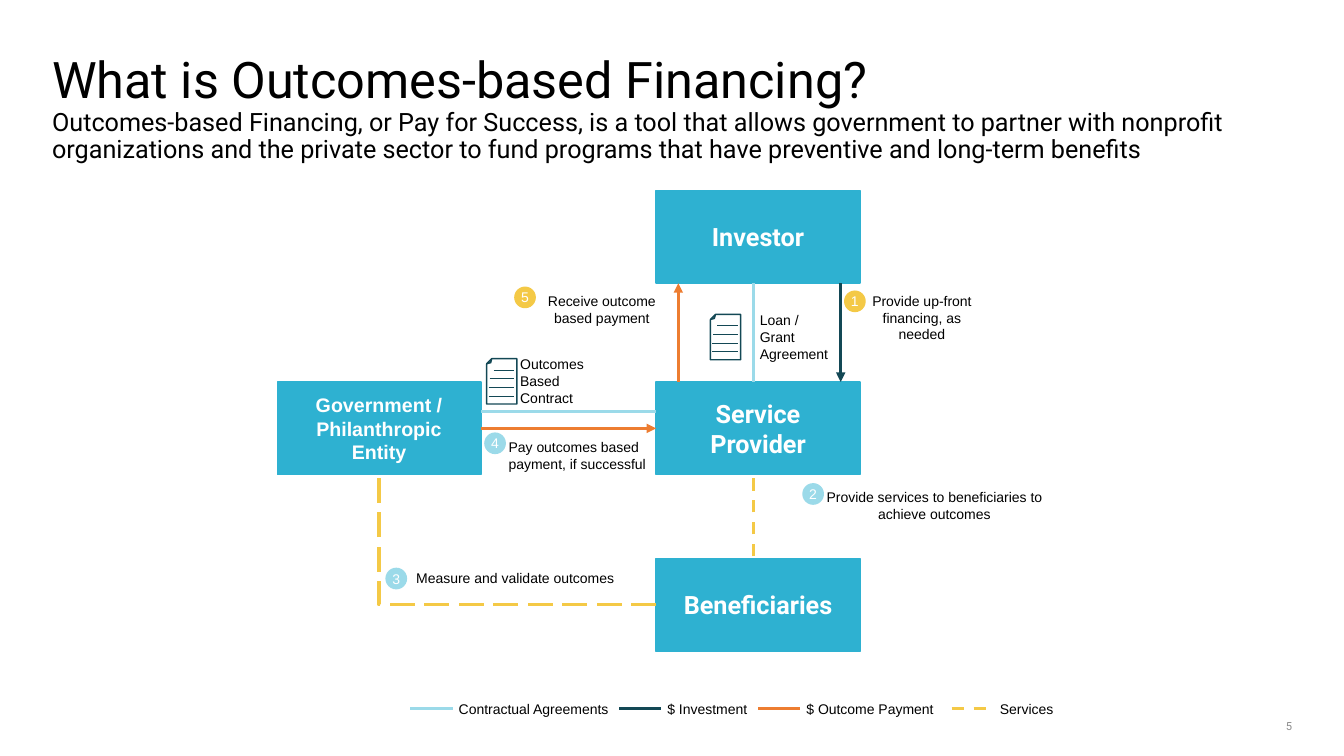
from dataclasses import dataclass

from lxml.etree import SubElement
from pptx import Presentation
from pptx.dml.color import RGBColor
from pptx.enum.dml import MSO_LINE
from pptx.enum.shapes import MSO_CONNECTOR, MSO_SHAPE
from pptx.enum.text import MSO_ANCHOR, MSO_AUTO_SIZE, PP_ALIGN
from pptx.oxml.ns import qn
from pptx.slide import Slide
from pptx.util import Pt


@dataclass(frozen=True)
class Theme:
    box: str = "2EB1D1"
    contract: str = "9BDAE9"
    investment: str = "134855"
    payment: str = "ED7D31"
    service: str = "F4C946"
    black: str = "000000"
    white: str = "FFFFFF"
    grey: str = "8C8C8C"
    heading: str = "Roboto"
    body: str = "Arial"
    title_size: float = 36
    lead_size: float = 18
    box_size: float = 18
    long_box_size: float = 14
    label_size: float = 10
    number_size: float = 8
    flow_width: float = 2.25
    outline_width: float = 1
    ruling_width: float = 0.5


@dataclass
class Diagram:
    slide: Slide
    theme: Theme

    def fill_text(self, frame, lines, sizes, font, color, align, paragraph_format=None, **run_format):
        frame.word_wrap = True
        for index, text in enumerate(lines):
            paragraph = frame.paragraphs[0] if index == 0 else frame.add_paragraph()
            formats = {"alignment": align, **(paragraph_format or {})}
            for name, value in formats.items():
                setattr(paragraph, name, value)
            run = paragraph.add_run()
            run.text = text
            size = sizes[index] if isinstance(sizes, tuple) else sizes
            for name, value in {"name": font, "size": Pt(size), **run_format}.items():
                setattr(run.font, name, value)
            run.font.color.rgb = RGBColor.from_string(color)

    def title(self, left, top, width, height, lines):
        shape = self.slide.shapes.title
        place = {"left": left, "top": top, "width": width, "height": height}
        for name, value in place.items():
            setattr(shape, name, Pt(value))
        frame = shape.text_frame
        frame.auto_size = MSO_AUTO_SIZE.NONE
        frame.vertical_anchor = MSO_ANCHOR.TOP
        self.fill_text(frame, lines, (self.theme.title_size, self.theme.lead_size),
                       self.theme.heading, self.theme.black, PP_ALIGN.LEFT,
                       {"line_spacing": 0.9, "space_before": Pt(0)})

    def slide_number(self, left, top, width, height, text):
        shape = self.slide.shapes.add_textbox(Pt(left), Pt(top), Pt(width), Pt(height))
        shape.text_frame.vertical_anchor = MSO_ANCHOR.MIDDLE
        self.fill_text(shape.text_frame, [text], self.theme.number_size, self.theme.heading,
                       self.theme.grey, PP_ALIGN.RIGHT)

    def label(self, left, top, width, *lines, align=PP_ALIGN.LEFT):
        height = 7.2 + 12 * len(lines)
        shape = self.slide.shapes.add_textbox(Pt(left), Pt(top), Pt(width), Pt(height))
        shape.text_frame.auto_size = MSO_AUTO_SIZE.SHAPE_TO_FIT_TEXT
        self.fill_text(shape.text_frame, lines, self.theme.label_size, self.theme.body,
                       self.theme.black, align)

    def outline(self, kind, left, top, width, height, color, filled=True):
        shape = self.slide.shapes.add_shape(kind, Pt(left), Pt(top), Pt(width), Pt(height))
        shape.shadow.inherit = False
        if filled:
            shape.fill.solid()
            shape.fill.fore_color.rgb = RGBColor.from_string(color)
        else:
            shape.fill.background()
        shape.line.color.rgb = RGBColor.from_string(color)
        shape.line.width = Pt(self.theme.outline_width)
        return shape

    def box(self, left, top, text, size, font):
        shape = self.outline(MSO_SHAPE.RECTANGLE, left, top, BOX_WIDTH, BOX_HEIGHT, self.theme.box)
        shape.text_frame.vertical_anchor = MSO_ANCHOR.MIDDLE
        self.fill_text(shape.text_frame, [text], size, font, self.theme.white,
                       PP_ALIGN.CENTER, bold=True)
        return shape

    def badge(self, left, top, text, color):
        shape = self.outline(MSO_SHAPE.OVAL, left, top, 14.5, 14.5, color)
        frame = shape.text_frame
        frame.vertical_anchor = MSO_ANCHOR.MIDDLE
        for side in ("left", "top", "right", "bottom"):
            setattr(frame, f"margin_{side}", 0)
        self.fill_text(frame, [text], self.theme.label_size, self.theme.body,
                       self.theme.white, PP_ALIGN.CENTER)

    def line(self, start, end, color, width, dash=None, arrow=False, kind=MSO_CONNECTOR.STRAIGHT):
        connector = self.slide.shapes.add_connector(kind, *map(Pt, (*start, *end)))
        connector.line.color.rgb = RGBColor.from_string(color)
        connector.line.width = Pt(width)
        if dash:
            connector.line.dash_style = dash
        properties = connector._element.spPr
        if arrow:
            SubElement(properties.find(qn("a:ln")), qn("a:tailEnd"), type="triangle")
        SubElement(properties, qn("a:effectLst"))
        return connector

    def flow(self, start, end, color, **options):
        return self.line(start, end, color, self.theme.flow_width, **options)

    def bent_flow(self, start, end, color, dash):
        connector = self.flow(start, end, color, dash=dash, kind=MSO_CONNECTOR.ELBOW)
        connector._element.spPr.find(qn("a:prstGeom")).set("prst", "bentConnector2")
        return connector

    def contract_icon(self, left, top):
        page = self.outline(MSO_SHAPE.FOLDED_CORNER, left, top, 21.6, 32.4,
                            self.theme.investment, filled=False)
        page.rotation = 180
        for row, indent in enumerate((5, 2.2, 1.5, 1.5)):
            height = top + 8 + 6.2 * row
            self.line((left + indent, height), (left + 19.5, height),
                      self.theme.investment, self.theme.ruling_width)


BOX_WIDTH, BOX_HEIGHT = 145.5, 66.3
ENTITY_LEFT, PROVIDER_LEFT = 198, 468.7
INVESTOR_TOP, PROVIDER_TOP, BENEFICIARIES_TOP = 136, 272.8, 398.9
INVESTOR_BOTTOM = INVESTOR_TOP + BOX_HEIGHT
PROVIDER_BOTTOM = PROVIDER_TOP + BOX_HEIGHT
ENTITY_RIGHT = ENTITY_LEFT + BOX_WIDTH
PROVIDER_MIDDLE = PROVIDER_TOP + BOX_HEIGHT / 2
BENEFICIARIES_MIDDLE = BENEFICIARIES_TOP + BOX_HEIGHT / 2
AXIS = 538.4
LEGEND_MIDDLE = 506.2

presentation = Presentation()
presentation.slide_width, presentation.slide_height = Pt(960), Pt(540)
slide = presentation.slides.add_slide(presentation.slide_layouts[5])
theme = Theme()
diagram = Diagram(slide, theme)

diagram.title(30, 36, 900, 72, [
    "What is Outcomes-based Financing?",
    "Outcomes-based Financing, or Pay for Success, is a tool that allows government to partner "
    "with nonprofit organizations and the private sector to fund programs that have preventive "
    "and long-term benefits",
])
diagram.slide_number(732, 504, 198, 28.8, "5")

provider = diagram.box(PROVIDER_LEFT, PROVIDER_TOP, "Service Provider", theme.box_size, theme.heading)
beneficiaries = diagram.box(PROVIDER_LEFT, BENEFICIARIES_TOP, "Beneficiaries",
                            theme.box_size, theme.heading)
entity = diagram.box(ENTITY_LEFT, PROVIDER_TOP, "Government / Philanthropic Entity",
                     theme.long_box_size, theme.body)
diagram.box(PROVIDER_LEFT, INVESTOR_TOP, "Investor", theme.box_size, theme.heading)

diagram.flow((484.5, PROVIDER_TOP), (484.5, INVESTOR_BOTTOM), theme.payment, arrow=True)
diagram.flow((600.5, INVESTOR_BOTTOM), (600.5, PROVIDER_TOP), theme.investment, arrow=True)
diagram.flow((AXIS, INVESTOR_BOTTOM), (AXIS, PROVIDER_TOP), theme.contract)
diagram.flow((AXIS, 397.4), (AXIS, 336.2), theme.service, dash=MSO_LINE.DASH)
diagram.flow((ENTITY_RIGHT, 293.8), (PROVIDER_LEFT, 293.8), theme.contract)
payment = diagram.flow((ENTITY_RIGHT, PROVIDER_MIDDLE), (PROVIDER_LEFT, PROVIDER_MIDDLE),
                       theme.payment, arrow=True)
payment.begin_connect(entity, 3)
payment.end_connect(provider, 1)
validation = diagram.bent_flow((PROVIDER_LEFT, BENEFICIARIES_MIDDLE),
                               (ENTITY_LEFT + BOX_WIDTH / 2, PROVIDER_BOTTOM),
                               theme.service, MSO_LINE.LONG_DASH)
validation.begin_connect(beneficiaries, 1)
validation.end_connect(entity, 2)

for left, top, width, text, align in (
    (614.2, 205.2, 88.6, "Provide up-front financing, as needed", PP_ALIGN.CENTER),
    (581, 345.6, 172.8, "Provide services to beneficiaries to achieve outcomes", PP_ALIGN.CENTER),
    (281.5, 403.4, 172.8, "Measure and validate outcomes", PP_ALIGN.CENTER),
    (356.2, 309.6, 118.8, "Pay outcomes based payment, if successful", PP_ALIGN.LEFT),
    (372.6, 205.2, 114.5, "Receive outcome based payment", PP_ALIGN.CENTER),
):
    diagram.label(left, top, width, text, align=align)

for text, left, top, color in (
    ("1", 603.4, 208, theme.service),
    ("2", 573.6, 345.6, theme.contract),
    ("3", 275.8, 406, theme.contract),
    ("4", 346.4, 309.4, theme.contract),
    ("5", 367.8, 205.2, theme.service),
):
    diagram.badge(left, top, text, color)

for left, top, label_left, label_top, lines in (
    (507.4, 224.6, 535.7, 218.9, ("Loan /", "Grant", "Agreement")),
    (347.6, 256.2, 364.5, 250.4, ("Outcomes", "Based", "Contract")),
):
    diagram.contract_icon(left, top)
    diagram.label(label_left, label_top, 88.6, *lines)

for left, width, text, color, dash in (
    (293.2, 125.3, "Contractual Agreements", theme.contract, None),
    (442.2, 72, "$ Investment", theme.investment, None),
    (541.5, 114.5, "$ Outcome Payment", theme.payment, None),
    (679.8, 55.4, "Services", theme.service, MSO_LINE.DASH),
):
    diagram.flow((left, LEGEND_MIDDLE), (left + 30.2, LEGEND_MIDDLE), color, dash=dash)
    diagram.label(left + 27.4, 496.6, width, text)

presentation.save("out.pptx")
